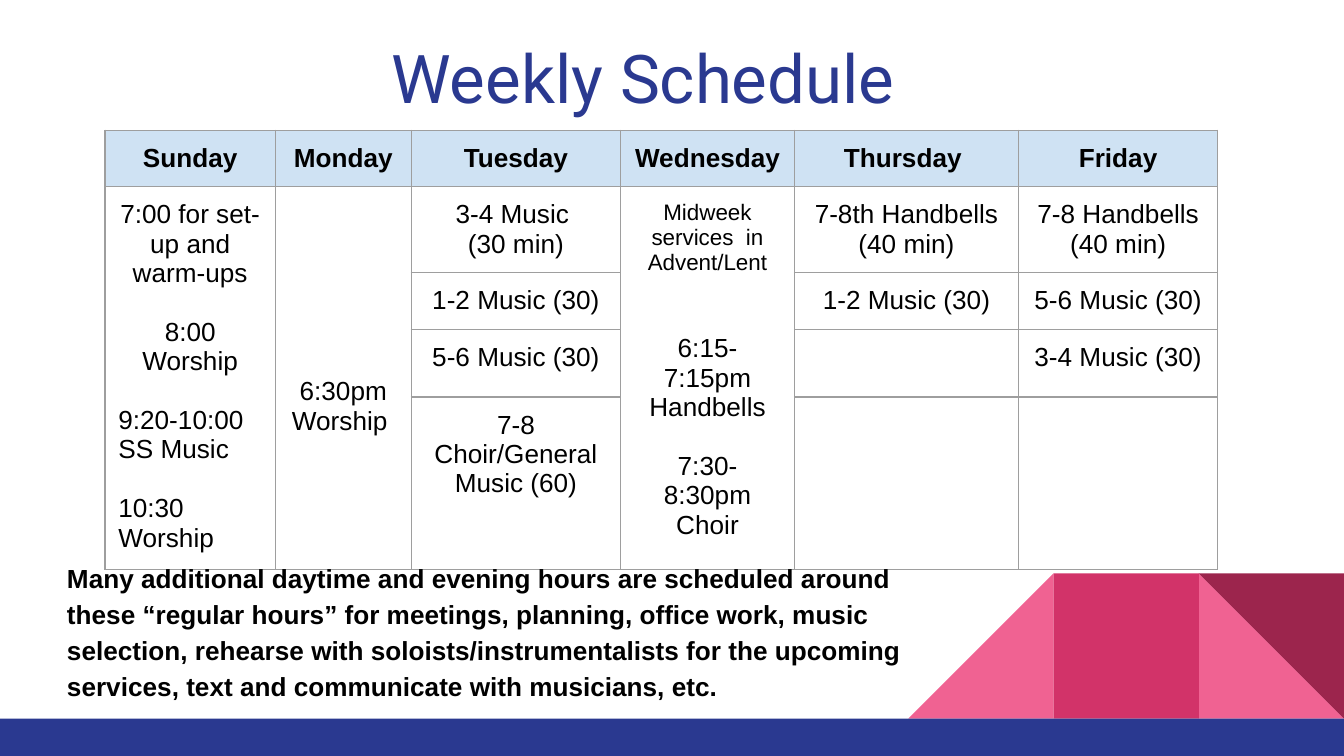
from lxml.etree import SubElement
from pptx import Presentation
from pptx.dml.color import RGBColor
from pptx.enum.shapes import MSO_SHAPE as Shape
from pptx.enum.text import PP_ALIGN as Align
from pptx.oxml.ns import qn
from pptx.util import Pt

COLORS = {"navy": "2A3990", "pink": "F06292", "rose": "D23369", "wine": "9C254D",
          "header": "CFE2F3", "border": "9E9E9E", "black": "000000", "white": "FFFFFF"}

TITLE = "Weekly Schedule"
NOTE = ("Many additional daytime and evening hours are scheduled around these "
        "“regular hours” for meetings, planning, office work, music selection, "
        "rehearse with soloists/instrumentalists for the upcoming services, text "
        "and communicate with musicians, etc.")

DAYS = ["Sunday", "Monday", "Tuesday", "Wednesday ", "Thursday ", "Friday"]
LINE = 15.8
ALL_DAY = {
    0: [("7:00 for set-up and warm-ups", 14, Align.CENTER, 0),
        ("8:00 Worship", 14, Align.CENTER, LINE),
        ("9:20-10:00 SS Music", 14, Align.LEFT, LINE),
        ("10:30 Worship", 14, Align.LEFT, LINE)],
    1: [("6:30pm Worship ", 14, Align.CENTER, 0)],
    3: [("Midweek services  in Advent/Lent", 12, Align.CENTER, 0),
        ("6:15-7:15pm Handbells", 14, Align.CENTER, 2 * LINE),
        ("7:30-8:30pm Choir", 14, Align.CENTER, LINE)],
}
CLASSES = {
    2: ["3-4 Music \n(30 min)", "1-2 Music (30)", "5-6 Music (30)",
        "7-8 Choir/General Music (60)"],
    4: ["7-8th Handbells\n(40 min)", "1-2 Music (30)"],
    5: ["7-8 Handbells\n(40 min)", "5-6 Music (30)", "3-4 Music (30)"],
}
COLUMN_WIDTHS = [91.4, 72.7, 112.3, 93, 120.2, 106.6]
ROW_HEIGHTS = [30, 45.5, 30.5, 34.5, 92.5]
INSET = 7.2

WIDTH, HEIGHT = 720, 405
TILE = 77.8
BAR_TOP = 385
TILES = [(Shape.RIGHT_TRIANGLE, 1, "pink", False, 0),
         (Shape.RIGHT_TRIANGLE, 3, "pink", True, 0),
         (Shape.RECTANGLE, 2, "rose", False, 0),
         (Shape.RIGHT_TRIANGLE, 1, "wine", False, 180)]


def rgb(name):
    return RGBColor.from_string(COLORS[name])


def style(paragraph, size, color="black", bold=False, font="Arial", align=Align.CENTER):
    paragraph.alignment = align
    for run in paragraph.runs:
        run.font.size, run.font.name, run.font.bold = Pt(size), font, bold
        run.font.color.rgb = rgb(color)


def add_block(kind, left, top, width, height, color):
    block = slide.shapes.add_shape(kind, Pt(left), Pt(top), Pt(width), Pt(height))
    block.shadow.inherit = False
    block.fill.solid()
    block.fill.fore_color.rgb = rgb(color)
    block.line.fill.background()
    return block


def add_text(text, left, top, width, height, **look):
    box = slide.shapes.add_textbox(Pt(left), Pt(top), Pt(width), Pt(height))
    frame = box.text_frame
    frame.word_wrap = True
    frame.margin_left = frame.margin_right = Pt(INSET)
    frame.margin_top = frame.margin_bottom = Pt(INSET)
    frame.text = text
    style(frame.paragraphs[0], **look)
    return frame.paragraphs[0]


def prepare_cell(cell, color):
    cell.margin_left = cell.margin_right = Pt(INSET)
    cell.margin_top = cell.margin_bottom = Pt(INSET)
    properties = cell._tc.get_or_add_tcPr()
    for side in ("a:lnL", "a:lnR", "a:lnT", "a:lnB"):
        border = SubElement(properties, qn(side), w=str(Pt(0.75)))
        fill = SubElement(border, qn("a:solidFill"))
        SubElement(fill, qn("a:srgbClr"), val=COLORS["border"])
    if color:
        cell.fill.solid()
        cell.fill.fore_color.rgb = rgb(color)
    else:
        cell.fill.background()


def fill_cell(cell, entries, bold=False):
    cell.text_frame.text = "\n".join(text for text, *_ in entries)
    for paragraph, (_, size, align, gap) in zip(cell.text_frame.paragraphs, entries):
        style(paragraph, size, bold=bold, align=align)
        paragraph.space_before = Pt(gap)


deck = Presentation()
deck.slide_width, deck.slide_height = Pt(WIDTH), Pt(HEIGHT)
slide = deck.slides.add_slide(deck.slide_layouts[6])
slide.background.fill.solid()
slide.background.fill.fore_color.rgb = rgb("white")

for kind, from_right, color, flipped, angle in TILES:
    tile = add_block(kind, WIDTH - from_right * TILE, BAR_TOP - TILE, TILE, TILE, color)
    tile.rotation = angle
    if flipped:
        tile._element.spPr.xfrm.set("flipH", "1")
add_block(Shape.RECTANGLE, 0, BAR_TOP, WIDTH, HEIGHT - BAR_TOP, "navy")

schedule = slide.shapes.add_table(
    len(ROW_HEIGHTS), len(DAYS), Pt(56.2), Pt(69.8),
    Pt(sum(COLUMN_WIDTHS)), Pt(sum(ROW_HEIGHTS))).table
schedule.horz_banding = False
for column, width in zip(schedule.columns, COLUMN_WIDTHS):
    column.width = Pt(width)
for index, (row, height) in enumerate(zip(schedule.rows, ROW_HEIGHTS)):
    row.height = Pt(height)
    for cell in row.cells:
        prepare_cell(cell, None if index else "header")

for column, day in enumerate(DAYS):
    fill_cell(schedule.cell(0, column), [(day, 14, Align.CENTER, 0)], bold=True)
for column, events in ALL_DAY.items():
    day_cell = schedule.cell(1, column)
    day_cell.merge(schedule.cell(len(ROW_HEIGHTS) - 1, column))
    fill_cell(day_cell, events)
schedule.cell(1, 1).margin_top = Pt(INSET + 6 * LINE)
for column, lessons in CLASSES.items():
    for row, lesson in enumerate(lessons, 1):
        fill_cell(schedule.cell(row, column),
                  [(line, 14, Align.CENTER, 0) for line in lesson.split("\n")])

add_text(TITLE, 9, 12, 671, 48, size=36, color="navy", font="Roboto")
note = add_text(NOTE, 28.8, 291.6, 478, 74, size=14, bold=True, align=Align.LEFT)
note.line_spacing = 1.15

deck.save("out.pptx")
